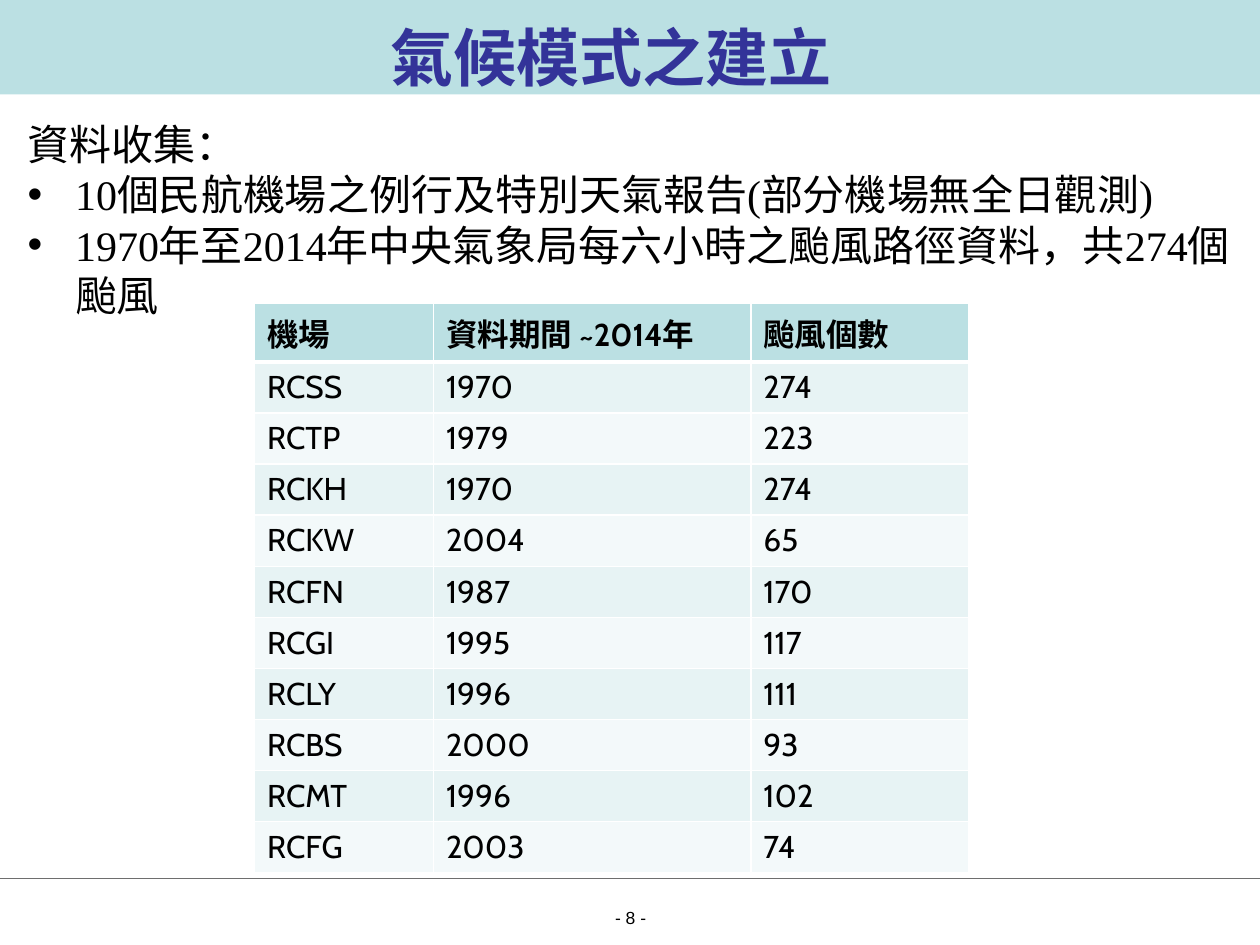
from pptx import Presentation
from pptx.dml.color import RGBColor as RGB
from pptx.enum.shapes import MSO_CONNECTOR as Conn, MSO_SHAPE as Shape
from pptx.enum.text import MSO_ANCHOR as Anchor, MSO_AUTO_SIZE as Auto, PP_ALIGN as Align
from pptx.oxml import parse_xml
from pptx.oxml.ns import nsdecls
from pptx.util import Pt

# Content
TITLE = "氣候模式之建立"
LEAD = "資料收集："
POINTS = [
    "10個民航機場之例行及特別天氣報告(部分機場無全日觀測)",
    "1970年至2014年中央氣象局每六小時之颱風路徑資料，共274個颱風",
]
HEAD = ("機場", "資料期間 ~2014年", "颱風個數")
ROWS = [
    ("RCSS", 1970, 274), ("RCTP", 1979, 223), ("RCKH", 1970, 274),
    ("RCKW", 2004, 65), ("RCFN", 1987, 170), ("RCGI", 1995, 117),
    ("RCLY", 1996, 111), ("RCBS", 2000, 93), ("RCMT", 1996, 102),
    ("RCFG", 2003, 74),
]
PAGE = "- 8 -"

THEME = {
    "ink": "000000", "title": "333399", "band": "BBE0E3", "rule": "6E6E6E",
    "grid": "FFFFFF", "odd": "E7F3F4", "even": "F3F9FA",
    "h1": 36, "body": 24, "cell": 18, "page": 10,
    "cjk": "Noto Sans CJK SC", "serif": "Times New Roman",
    "table": "Cabin", "sans": "Arial",
}
WIDE, HIGH = 720, 540
COLS = (102.24, 181.44, 124.56)
ROW = 28.8


def color(key):
    return RGB.from_string(THEME[key])


def write(para, text, size, face, ink="ink", bold=False, align=Align.LEFT):
    para.alignment = align
    para.space_before = Pt(0)
    run = para.add_run()
    run.text = text
    font = run.font
    font.size, font.name, font.bold = Pt(THEME[size]), THEME[face], bold
    font.color.rgb = color(ink)
    return run


def place(shape, x, y, w, h):
    shape.left, shape.top, shape.width, shape.height = Pt(x), Pt(y), Pt(w), Pt(h)


def bullet(para, indent, char=None):
    props = para._p.get_or_add_pPr()
    props.set("marL", str(Pt(indent)))
    props.set("indent", str(Pt(-indent)))
    mark = (f'<a:buChar {nsdecls("a")} char="{char}"/>' if char
            else f'<a:buNone {nsdecls("a")}/>')
    props.append(parse_xml(mark))


def border(cell, **widths):
    props = cell._tc.get_or_add_tcPr()
    for side in "LRTB":
        props.append(parse_xml(
            f'<a:ln{side} {nsdecls("a")} w="{Pt(widths.get(side, 1))}"><a:solidFill>'
            f'<a:srgbClr val="{THEME["grid"]}"/></a:solidFill></a:ln{side}>'))


deck = Presentation()
deck.slide_width, deck.slide_height = Pt(WIDE), Pt(HIGH)
slide = deck.slides.add_slide(deck.slide_layouts[1])
shapes = slide.shapes
title, body = slide.placeholders

# Title band, behind the title
band = shapes.add_shape(Shape.RECTANGLE, 0, 0, Pt(WIDE), Pt(54))
band.shadow.inherit = False
band.fill.solid()
band.fill.fore_color.rgb = color("band")
band.line.fill.background()
title.element.addprevious(band.element)

# Title
place(title, 4.32, 9.36, 689.76, 45.36)
frame = title.text_frame
frame.auto_size, frame.vertical_anchor = Auto.NONE, Anchor.MIDDLE
run = write(frame.paragraphs[0], TITLE, "h1", "cjk", ink="title", bold=True,
            align=Align.CENTER)
run.font._element.append(
    parse_xml(f'<a:ea {nsdecls("a")} typeface="{THEME["cjk"]}"/>'))

# Body list
place(body, 8.64, 64.08, 724.32, 145.44)
frame = body.text_frame
frame.auto_size, frame.vertical_anchor = Auto.NONE, Anchor.TOP
para = frame.paragraphs[0]
bullet(para, 0)
write(para, LEAD, "body", "serif")
for text in POINTS:
    para = frame.add_paragraph()
    bullet(para, 27, "•")
    write(para, text, "body", "serif")

# Airport table
lines = [HEAD, *ROWS]
grid = shapes.add_table(len(lines), len(COLS), Pt(145.44), Pt(173.52),
                        Pt(sum(COLS)), Pt(ROW * len(lines))).table
for col, width in zip(grid.columns, COLS):
    col.width = Pt(width)
for r, line in enumerate(lines):
    grid.rows[r].height = Pt(ROW)
    fill = "band" if r == 0 else "odd" if r % 2 else "even"
    for c, value in enumerate(line):
        cell = grid.cell(r, c)
        border(cell, B=3 if r == 0 else 1, T=3 if r == 1 else 1)
        cell.fill.solid()
        cell.fill.fore_color.rgb = color(fill)
        write(cell.text_frame.paragraphs[0], str(value), "cell", "table",
              bold=r == 0)

# Footer rule and page number
rule = shapes.add_connector(Conn.STRAIGHT, 0, Pt(501.84), Pt(WIDE), Pt(501.84))
rule.line.color.rgb = color("rule")
rule.line.width = Pt(0.5)
rule.element.spPr.append(parse_xml(f'<a:effectLst {nsdecls("a")}/>'))

page = shapes.add_textbox(Pt(322.56), Pt(515.52), Pt(75.6), Pt(17.28))
frame = page.text_frame
frame.word_wrap, frame.vertical_anchor = True, Anchor.MIDDLE
frame.margin_left = frame.margin_right = frame.margin_top = frame.margin_bottom = 0
write(frame.paragraphs[0], PAGE, "page", "sans", align=Align.CENTER)

deck.save("out.pptx")
